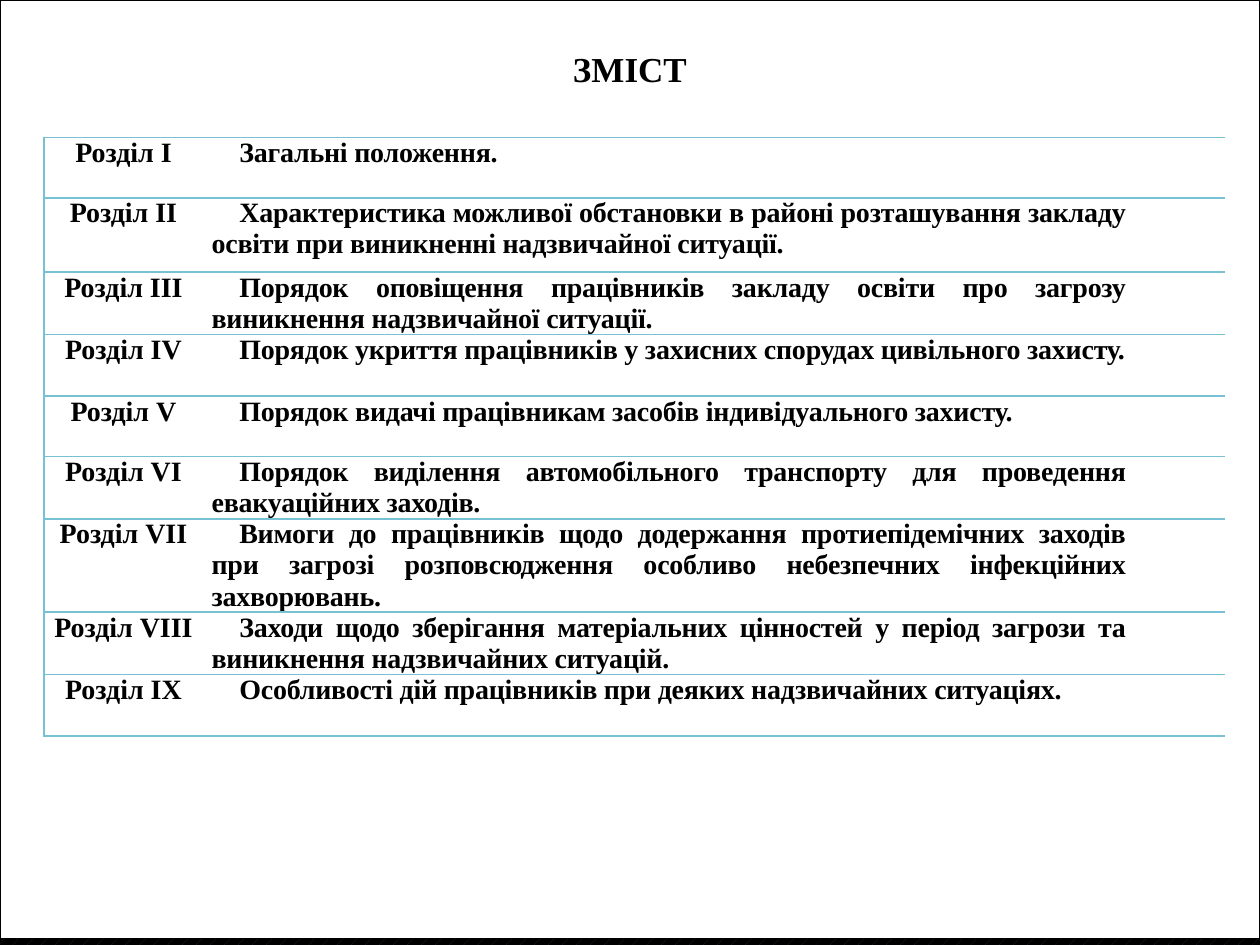
from lxml.etree import SubElement
from pptx import Presentation
from pptx.dml.color import RGBColor
from pptx.enum.dml import MSO_PATTERN
from pptx.enum.shapes import MSO_SHAPE
from pptx.enum.text import MSO_ANCHOR, PP_ALIGN
from pptx.oxml.ns import qn
from pptx.util import Inches, Pt

TITLE = "ЗМІСТ"
# Section number, section title, row height
SECTIONS = [
    ("І", "Загальні положення.", 0.48),
    ("ІІ", "Характеристика можливої обстановки в районі розташування закладу освіти "
           "при виникненні надзвичайної ситуації.", 0.59),
    ("ІІІ", "Порядок оповіщення працівників закладу освіти про загрозу виникнення "
            "надзвичайної ситуації.", 0.49),
    ("ІV", "Порядок укриття працівників у захисних спорудах цивільного захисту.", 0.49),
    ("V", "Порядок видачі працівникам засобів індивідуального захисту.", 0.48),
    ("VІ", "Порядок виділення автомобільного транспорту для проведення евакуаційних "
           "заходів.", 0.49),
    ("VІІ", "Вимоги до працівників щодо додержання протиепідемічних заходів при загрозі "
            "розповсюдження особливо небезпечних інфекційних захворювань.", 0.74),
    ("VІІІ", "Заходи щодо зберігання матеріальних цінностей у період загрози та "
             "виникнення надзвичайних ситуацій.", 0.49),
    ("ІХ", "Особливості дій працівників при деяких надзвичайних ситуаціях.", 0.49),
]
COLUMN_WIDTHS = [1.26, 7.4, 0.71]
FONT, BLACK, WHITE, RULE = "Times New Roman", "000000", "FFFFFF", "78C0D4"
NO_GRID_STYLE = "{2D5ABB26-0587-4C30-8999-92F81FD0307C}"


def color(value):
    return RGBColor.from_string(value)


def write(frame, text, size=16, align=PP_ALIGN.CENTER, indent=0, spacing=0):
    paragraph = frame.paragraphs[0]
    paragraph.alignment = align
    if indent:
        properties = paragraph._p.get_or_add_pPr()
        properties.set("marL", "0")
        properties.set("indent", str(Inches(indent)))
    run = paragraph.add_run()
    run.text = text
    font = run.font
    font.name, font.size, font.bold = FONT, Pt(size), True
    font.color.rgb = color(BLACK)
    if spacing:
        run._r.get_or_add_rPr().set("spc", str(int(spacing * 100)))


def style_cell(cell, sides, margin):
    properties = cell._tc.get_or_add_tcPr()
    for side in sides:
        line = SubElement(properties, qn(f"a:ln{side}"), w=str(Pt(1)))
        SubElement(SubElement(line, qn("a:solidFill")), qn("a:srgbClr"), val=RULE)
    cell.fill.solid()
    cell.fill.fore_color.rgb = color(WHITE)
    cell.margin_left = cell.margin_right = Inches(margin)
    cell.margin_top = cell.margin_bottom = 0


presentation = Presentation()
presentation.slide_width, presentation.slide_height = Inches(10), Inches(7.5)
slide = presentation.slides.add_slide(presentation.slide_layouts[6])

# Patterned background
background = slide.background.fill
background.patterned()
background.pattern = MSO_PATTERN.PERCENT_10
background.fore_color.rgb = color("24263C")
background.back_color.rgb = color(BLACK)

# White page with the title
page = slide.shapes.add_shape(MSO_SHAPE.RECTANGLE, 0, 0, Inches(10), Inches(7.45))
page.shadow.inherit = False
page.fill.solid()
page.fill.fore_color.rgb = color(WHITE)
page.line.color.rgb = color(BLACK)
page.line.width = Pt(0.75)
page.text_frame.vertical_anchor = MSO_ANCHOR.TOP
page.text_frame.margin_top = Inches(0.38)
write(page.text_frame, TITLE, size=20)

# Table of contents
table_height = sum(height for _, _, height in SECTIONS)
table = slide.shapes.add_table(
    len(SECTIONS), len(COLUMN_WIDTHS), Inches(0.35), Inches(1.09),
    Inches(sum(COLUMN_WIDTHS)), Inches(table_height)).table
table.first_row = table.horz_banding = False
table._tbl.tblPr.find(qn("a:tableStyleId")).text = NO_GRID_STYLE
for column, width in zip(table.columns, COLUMN_WIDTHS):
    column.width = Inches(width)

for row, (number, section, height) in zip(table.rows, SECTIONS):
    row.height = Inches(height)
    number_cell, section_cell, empty_cell = row.cells
    style_cell(number_cell, "LTB", 0.05)
    style_cell(section_cell, "TB", 0.07)
    style_cell(empty_cell, "TB", 0.07)
    write(number_cell.text_frame, f"Розділ {number}")
    write(section_cell.text_frame, section, align=PP_ALIGN.JUSTIFY, indent=0.22, spacing=-0.1)

presentation.save("out.pptx")
